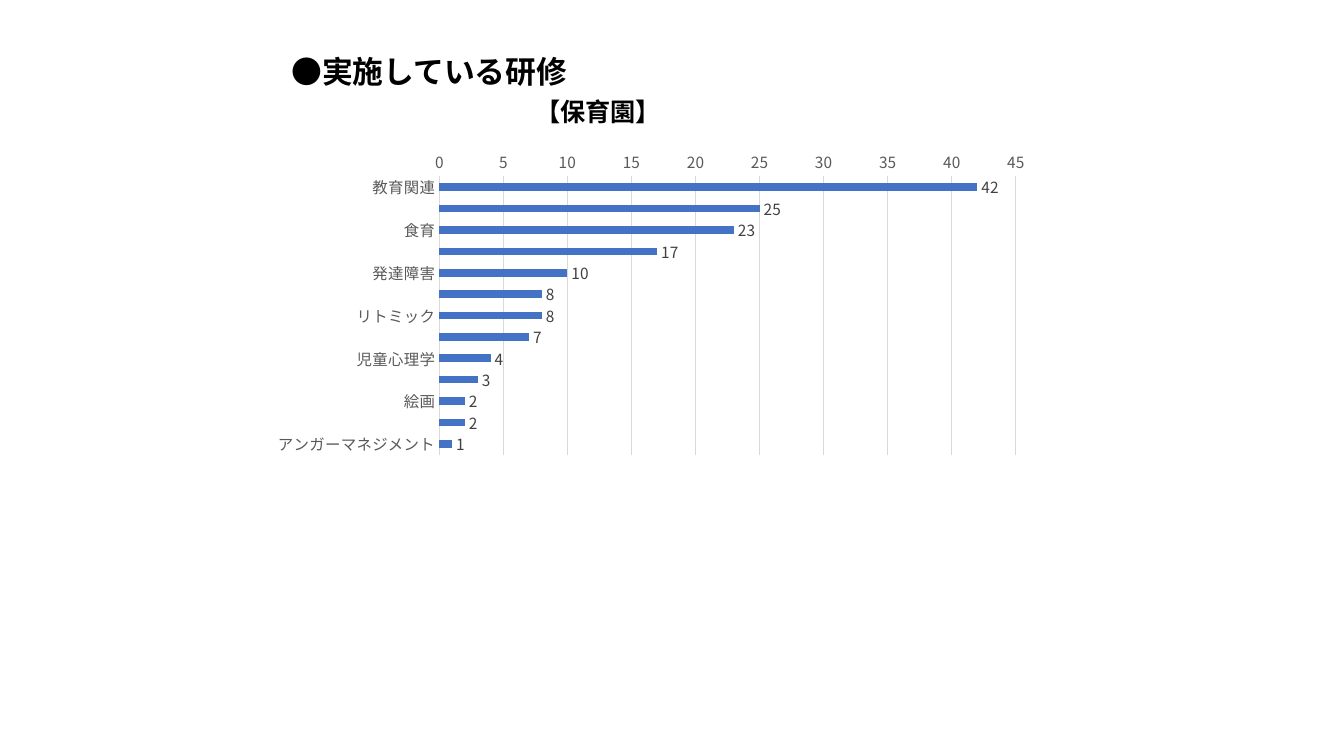
from pptx import Presentation
from pptx.chart.data import CategoryChartData
from pptx.dml.color import RGBColor
from pptx.enum.chart import XL_CHART_TYPE, XL_LABEL_POSITION, XL_TICK_MARK
from pptx.enum.text import MSO_ANCHOR, PP_ALIGN
from pptx.oxml import parse_xml
from pptx.oxml.ns import nsdecls, qn
from pptx.util import Pt

BAR = XL_CHART_TYPE.BAR_CLUSTERED
OUTSIDE_END = XL_LABEL_POSITION.OUTSIDE_END
NO_TICK = XL_TICK_MARK.NONE
TOP = MSO_ANCHOR.TOP
LEFT = PP_ALIGN.LEFT
FONT = "Noto Sans CJK JP"
GRID = "D9D9D9"
AXIS_TEXT = "595959"

TRAININGS = {
    "教育関連": 42, "緊急対応(応急処置など)": 25, "食育": 23,
    "キャリアアップ": 17, "発達障害": 10, "防災": 8, "リトミック": 8,
    "体操": 7, "児童心理学": 4, "音楽": 3, "絵画": 2, "絵本": 2,
    "アンガーマネジメント": 1,
}


def color(text):
    return RGBColor.from_string(text)


def style(font, size, text_color, bold=False):
    font.name = FONT
    font.size = Pt(size)
    font.bold = bold
    font.color.rgb = color(text_color)


deck = Presentation()
deck.slide_width, deck.slide_height = Pt(960), Pt(540)
page = deck.slides.add_slide(deck.slide_layouts[5])

# Bar chart of trainings
data = CategoryChartData()
data.categories = list(TRAININGS)
data.add_series("実施園数", list(TRAININGS.values()))
chart = page.shapes.add_chart(
    BAR, Pt(173.5), Pt(56.2), Pt(615.6), Pt(297.4), data).chart
style(chart.font, 10, "000000")
chart.has_legend = False
chart.has_title = False

plot = chart.plots[0]
plot.gap_width = 182
plot.vary_by_categories = False
bars = plot.series[0]
bars.format.fill.solid()
bars.format.fill.fore_color.rgb = color("4472C4")
labels = bars.data_labels
labels.show_value = True
labels.position = OUTSIDE_END
style(labels.font, 11, "404040")

# Axes: first category at the top, value scale above the bars
names, values = chart.category_axis, chart.value_axis
for axis in (names, values):
    axis.major_tick_mark = axis.minor_tick_mark = NO_TICK
    style(axis.tick_labels.font, 11, AXIS_TEXT)
names.reverse_order = True
names.has_major_gridlines = False
values.has_major_gridlines = True
values.minimum_scale, values.maximum_scale, values.major_unit = 0, 45, 5
values.format.line.fill.background()
for line in (names.format.line, values.major_gridlines.format.line):
    line.color.rgb = color(GRID)
    line.width = Pt(0.75)

# Fixed inner plot area
chart_root = chart._chartSpace
plot_area = chart_root.find(".//" + qn("c:plotArea"))
for layout in plot_area.findall(qn("c:layout")):
    plot_area.remove(layout)
plot_area.insert(0, parse_xml(
    f'<c:layout {nsdecls("c")}><c:manualLayout><c:layoutTarget val="inner"/>'
    '<c:xMode val="edge"/><c:yMode val="edge"/><c:x val="0.228"/>'
    '<c:y val="0.235"/><c:w val="0.669"/><c:h val="0.668"/>'
    '</c:manualLayout></c:layout>'))

# Heading and subheading
heading = page.shapes.title
heading.left, heading.top = Pt(200.9), Pt(33.8)
heading.width, heading.height = Pt(781.2), Pt(33.8)
subheading = page.shapes.add_textbox(Pt(375.1), Pt(65.5), Pt(105.1), Pt(28.8))
for box, text, size in ((heading, "●実施している研修", 22),
                        (subheading, "【保育園】", 18)):
    frame = box.text_frame
    frame.word_wrap = True
    frame.vertical_anchor = TOP
    para = frame.paragraphs[0]
    para.alignment = LEFT
    span = para.add_run()
    span.text = text
    style(span.font, size, "000000", bold=True)

# Use the same font for Japanese characters
for root in (chart_root, heading.element, subheading.element):
    for latin in list(root.iter(qn("a:latin"))):
        latin.addnext(parse_xml(f'<a:ea {nsdecls("a")} typeface="{FONT}"/>'))

deck.save("out.pptx")
